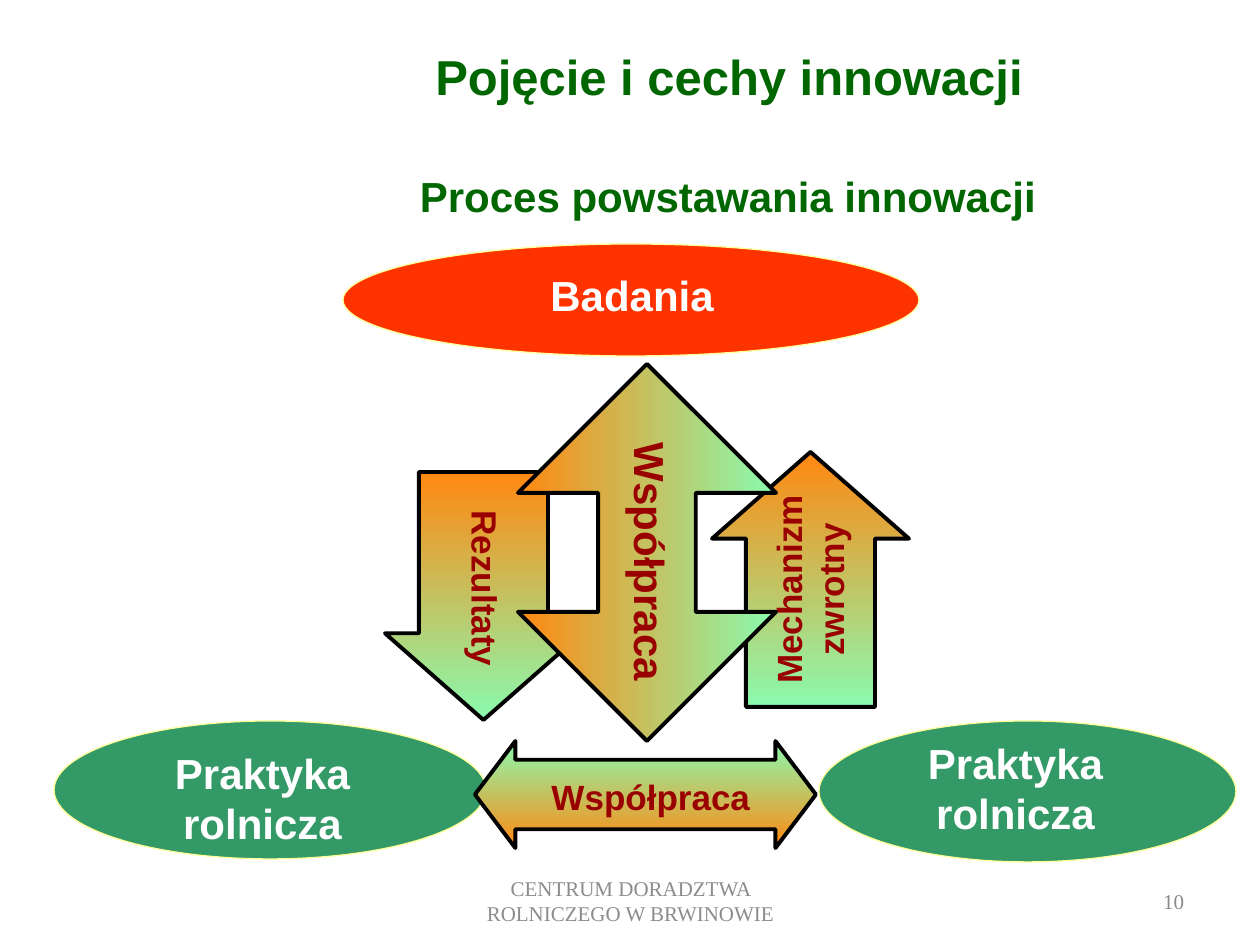
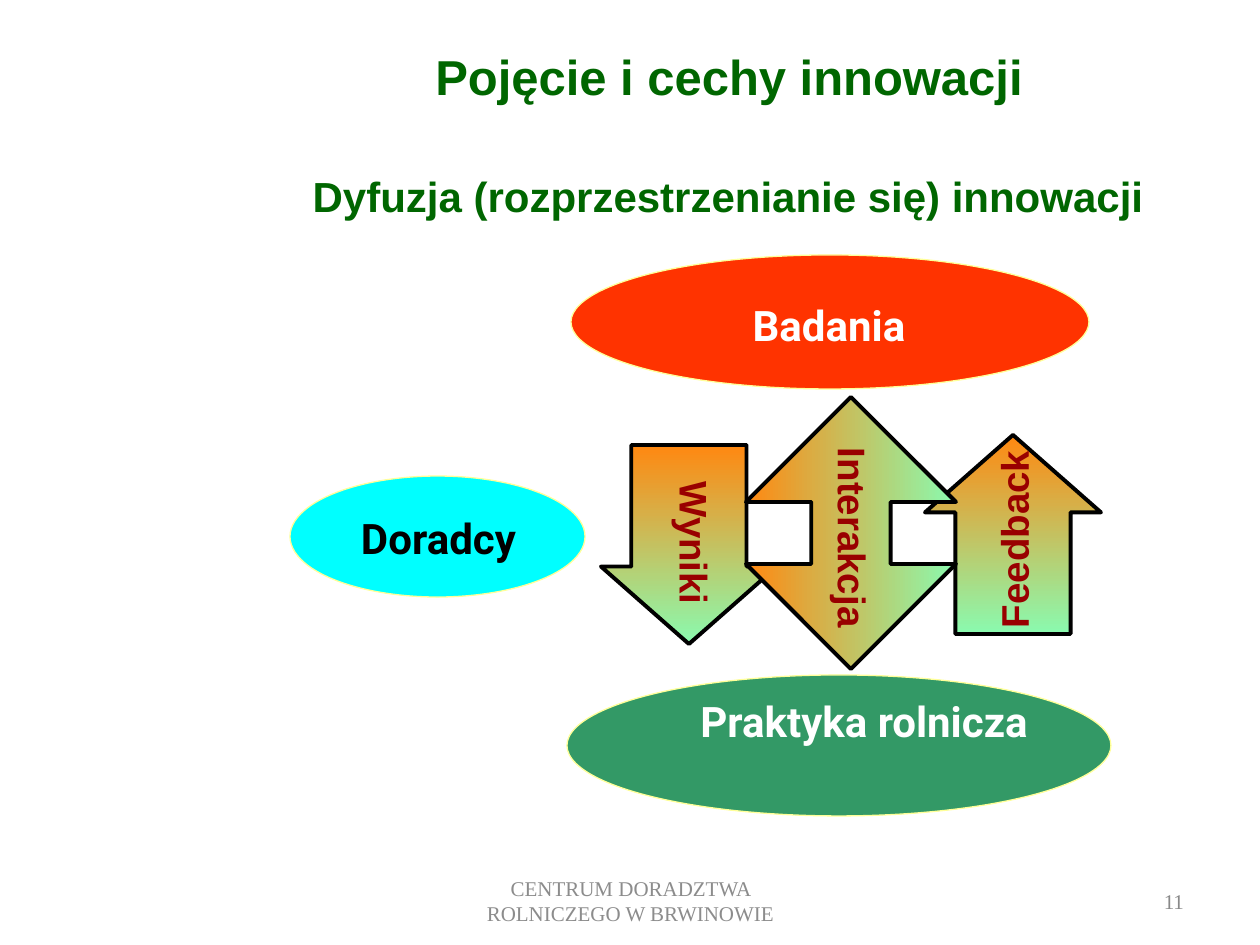
from dataclasses import dataclass

from pptx import Presentation
from pptx.dml.color import RGBColor
from pptx.enum.shapes import MSO_SHAPE as SHAPE
from pptx.enum.text import MSO_ANCHOR as ANCHOR, PP_ALIGN as ALIGN
from pptx.util import Pt

PX = 914400 / 126
SLIDE_W, SLIDE_H = 1260, 945


@dataclass(frozen=True)
class Theme:
    sans: str = "Arial"
    rounded: str = "Roboto"
    serif: str = "Times New Roman"
    heading: str = "006600"
    footer: str = "8C8C8C"
    number: str = "898989"
    research: str = "FF3300"
    practice: str = "339966"
    advisers: str = "00FFFF"
    oval_line: str = "FFFF99"
    warm: str = "FF8811"
    cool: str = "8AFAAF"
    arrow_text: str = "990000"
    black: str = "000000"
    white: str = "FFFFFF"
    title_size: int = 28
    large: int = 24
    medium: int = 22
    small: int = 20
    footer_size: int = 12


T = Theme()

# Arrow kind: preset shape, gradient angle, first and last colour, text rotation
ARROWS = {
    "down": (SHAPE.DOWN_ARROW, 270, T.warm, T.cool, 90),
    "up": (SHAPE.UP_ARROW, 270, T.warm, T.cool, 270),
    "vertical": (SHAPE.UP_DOWN_ARROW, 0, T.warm, T.cool, 90),
    "horizontal": (SHAPE.LEFT_RIGHT_ARROW, 270, T.cool, T.warm, 0),
}


def px(*lengths):
    return [round(n * PX) for n in lengths]


def rgb(color):
    return RGBColor.from_string(color)


def add_text(s, box, text, size, color, font=T.sans, bold=True,
             align=ALIGN.CENTER, anchor=ANCHOR.TOP, insets=(13, 6)):
    tb = s.shapes.add_textbox(*px(*box))
    tf = tb.text_frame
    tf.word_wrap = True
    tf.vertical_anchor = anchor
    tf.margin_left = tf.margin_right = px(insets[0])[0]
    tf.margin_top = tf.margin_bottom = px(insets[1])[0]
    tf.text = text
    p = tf.paragraphs[0]
    p.alignment = align
    f = p.runs[0].font
    f.name, f.size, f.bold = font, Pt(size), bold
    f.color.rgb = rgb(color)
    return tb


def add_outlined(s, kind, box, line, width):
    sp = s.shapes.add_shape(kind, *px(*box))
    sp.shadow.inherit = False
    sp.line.color.rgb = rgb(line)
    sp.line.width = Pt(width)
    return sp


def add_oval(s, box, fill, text, inner, color=T.white, font=T.sans, spacing=None):
    """Draw an oval; inner is its text area, measured from the oval's corner."""
    sp = add_outlined(s, SHAPE.OVAL, box, T.oval_line, 0.75)
    sp.fill.solid()
    sp.fill.fore_color.rgb = rgb(fill)
    dx, dy, w, h = inner
    tb = add_text(s, (box[0] + dx, box[1] + dy, w, h), text, T.large, color,
                  font, insets=(23, 16))
    if spacing:
        tb.text_frame.paragraphs[0].line_spacing = spacing


def add_arrow(s, kind, box, text, size, inner, align=ALIGN.LEFT):
    """Draw an arrow; inner is its label's offset from the centre, length and height."""
    shape, angle, first, last, rotation = ARROWS[kind]
    sp = add_outlined(s, shape, box, T.black, 2.25)
    single = kind in ("down", "up")
    sp.adjustments[0] = 0.655 if single else 0.649
    sp.adjustments[1] = 0.44 if single else 0.378
    sp.fill.gradient()
    sp.fill.gradient_angle = angle
    for stop, color in zip(sp.fill.gradient_stops, (first, last)):
        stop.color.rgb = rgb(color)

    x, y, w, h = box
    dx, dy, length, height = inner
    label = (x + w / 2 + dx - length / 2, y + h / 2 + dy - height / 2, length, height)
    add_text(s, label, text, size, T.arrow_text, align=align).rotation = rotation


def new_slide(prs, subtitle, number):
    """Add a slide with the shared title, subtitle and footer."""
    s = prs.slides.add_slide(prs.slide_layouts[6])
    add_text(s, (431, 876, 399, 50), "CENTRUM DORADZTWA ROLNICZEGO W BRWINOWIE",
             T.footer_size, T.footer, T.serif, False, anchor=ANCHOR.MIDDLE)
    add_text(s, (903, 876, 294, 50), str(number), T.footer_size, T.number,
             T.serif, False, ALIGN.RIGHT, ANCHOR.MIDDLE)
    add_text(s, (273, -4, 912, 160), "Pojęcie i cechy innowacji",
             T.title_size, T.heading, anchor=ANCHOR.MIDDLE)
    add_text(s, (272, 165, 912, 73), subtitle, T.large, T.heading)
    return s


def creation_slide(prs):
    s = new_slide(prs, "Proces powstawania innowacji", 10)
    add_oval(s, (343, 244, 576, 112), T.research, "Badania", (58, 9, 462, 84))
    add_oval(s, (54, 721, 432, 138), T.practice, "Praktyka rolnicza",
             (41, 10, 335, 135))
    add_oval(s, (819, 721, 417, 141), T.practice, "Praktyka rolnicza",
             (29, 0, 335, 135))
    add_arrow(s, "down", (385, 472, 197, 248), "Rezultaty", T.small,
              (-3, 5, 207, 64))
    add_arrow(s, "up", (712, 452, 197, 255), "Mechanizm zwrotny", T.small,
              (-1, 10, 234, 97), ALIGN.CENTER)
    add_arrow(s, "vertical", (518, 364, 258, 377), "Współpraca", T.large,
              (3, 13, 271, 64))
    add_arrow(s, "horizontal", (475, 741, 341, 107), "Współpraca", T.small,
              (15, 2, 244, 55))


def diffusion_slide(prs):
    s = new_slide(prs, "Dyfuzja (rozprzestrzenianie się) innowacji", 11)
    add_oval(s, (571, 255, 518, 134), T.research, "Badania",
             (50, 29, 416, 60), font=T.rounded)
    add_oval(s, (567, 675, 544, 141), T.practice, "Praktyka rolnicza",
             (106, 5, 382, 60), font=T.rounded)
    add_arrow(s, "down", (601, 445, 176, 199), "Wyniki", T.medium,
              (3, 14, 180, 64))
    add_arrow(s, "up", (925, 435, 176, 199), "Feedback", T.medium,
              (1, -7, 227, 59))
    add_arrow(s, "vertical", (746, 397, 210, 272), "Interakcja", T.medium,
              (2, 19, 234, 59))
    add_oval(s, (290, 476, 295, 121), T.advisers, "Doradcy",
             (30, 34, 237, 68), T.black, T.rounded, 0.7)


def main():
    prs = Presentation()
    prs.slide_width, prs.slide_height = px(SLIDE_W, SLIDE_H)
    creation_slide(prs)
    diffusion_slide(prs)
    prs.save("out.pptx")


if __name__ == "__main__":
    main()
